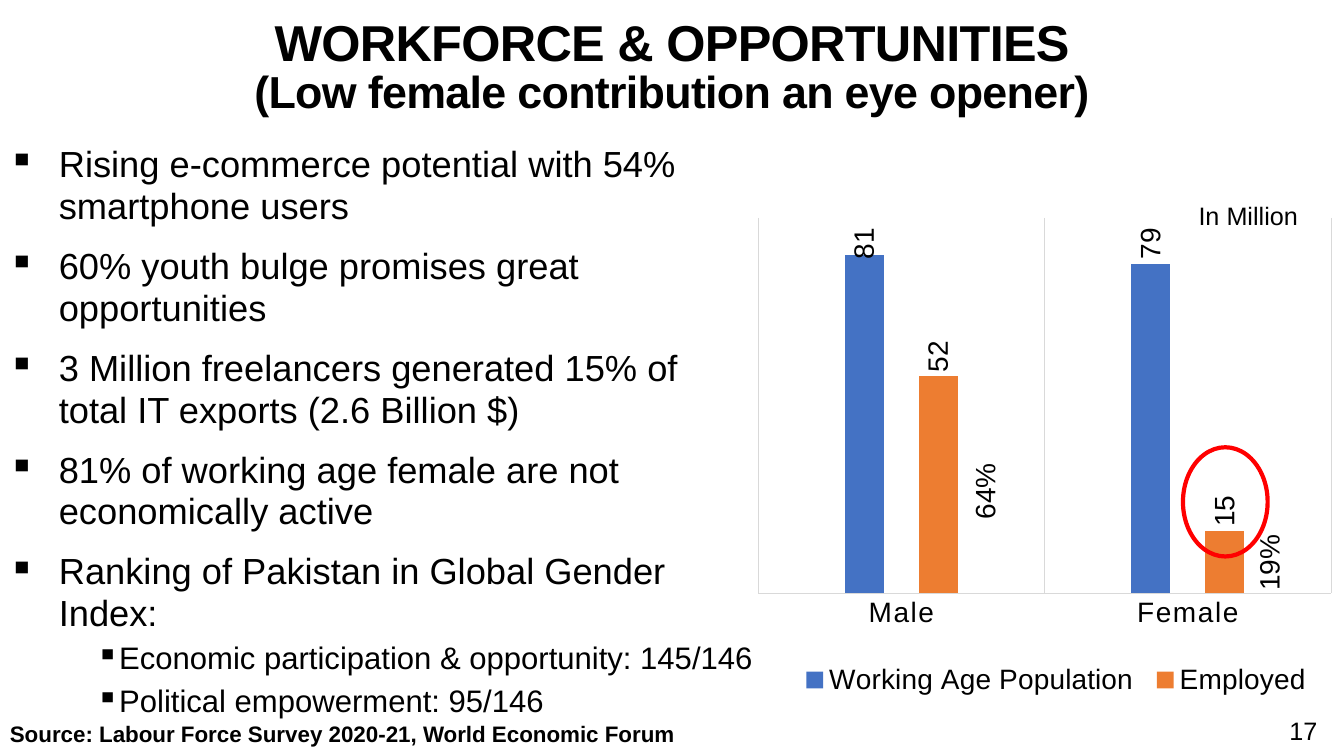
from dataclasses import dataclass

import pptx
import pptx.chart.data
import pptx.dml.color
import pptx.enum.chart
import pptx.enum.text
import pptx.enum.shapes
import pptx.oxml
import pptx.oxml.ns
import pptx.util

Pt = pptx.util.Pt
RGB = pptx.dml.color.RGBColor.from_string
qn = pptx.oxml.ns.qn
PP_ALIGN = pptx.enum.text.PP_ALIGN
ANCHOR = pptx.enum.text.MSO_ANCHOR


@dataclass(frozen=True)
class Theme:
    """Colours, font and type sizes of the slide."""
    font: str = "Arial"
    text: str = "000000"
    grid: str = "D9D9D9"
    mark: str = "FF0000"
    series: tuple = ("4472C4", "ED7D31")
    title: float = 36
    subtitle: float = 32
    body: float = 25.9
    sub: float = 22.2
    chart: float = 20
    small: float = 18
    source: float = 16


THEME = Theme()

BULLETS = [
    (0, "Rising e-commerce potential with 54% smartphone users"),
    (0, "60% youth bulge promises great opportunities"),
    (0, "3 Million freelancers generated 15% of total IT exports (2.6 Billion $)"),
    (0, "81% of working age female are not economically active"),
    (0, "Ranking of Pakistan in Global Gender Index:"),
    (1, "Economic participation & opportunity: 145/146"),
    (1, "Political empowerment: 95/146"),
]


def points(*values):
    """Convert a series of numbers to point lengths."""
    return [Pt(v) for v in values]


def style_font(font, size, bold=False):
    """Apply the theme typeface and colour at a given size."""
    font.name, font.size, font.bold = THEME.font, Pt(size), bold
    font.color.rgb = RGB(THEME.text)


def add_label(slide, box, text, size, bold=False, align=PP_ALIGN.LEFT,
              anchor=ANCHOR.TOP, rotation=0):
    """Add a single-line text box."""
    sp = slide.shapes.add_textbox(*points(*box))
    sp.rotation = rotation
    tf = sp.text_frame
    tf.word_wrap, tf.vertical_anchor = True, anchor
    p = tf.paragraphs[0]
    p.text, p.alignment = text, align
    style_font(p.font, size, bold)


def add_title(slide, box):
    """Format the title placeholder with its two lines."""
    sp = slide.shapes.title
    sp.left, sp.top, sp.width, sp.height = points(*box)
    tf = sp.text_frame
    tf.auto_size = pptx.enum.text.MSO_AUTO_SIZE.NONE
    tf.vertical_anchor = ANCHOR.MIDDLE
    p = tf.paragraphs[0]
    p.alignment, p.line_spacing = PP_ALIGN.CENTER, 0.85
    lines = [("WORKFORCE & OPPORTUNITIES", THEME.title),
             ("(Low female contribution an eye opener)", THEME.subtitle)]
    for i, (text, size) in enumerate(lines):
        if i:
            p.add_line_break()
        r = p.add_run()
        r.text = text
        style_font(r.font, size, True)
        r.font._element.set("spc", "-50")


def add_bullets(slide, box):
    """Add the bulleted list with its two indent levels."""
    tf = slide.shapes.add_textbox(*points(*box)).text_frame
    tf.word_wrap = True
    tf.margin_left = tf.margin_right = 0
    levels = [(THEME.body, 36, 36, 11, 2), (THEME.sub, 72, 9.4, 2, 3.5)]
    for i, (level, text) in enumerate(BULLETS):
        size, left, hang, before, after = levels[level]
        p = tf.add_paragraph() if i else tf.paragraphs[0]
        p.text, p.level, p.line_spacing = text, level, 0.96
        p.space_before, p.space_after = Pt(before), Pt(after)
        style_font(p.font, size)
        pPr = p._p.get_or_add_pPr()
        pPr.set("marL", str(Pt(left)))
        pPr.set("indent", str(-Pt(hang)))
        bullet = pptx.oxml.parse_xml(
            f'<a:buChar {pptx.oxml.ns.nsdecls("a")} char="▪"/>')
        pPr.find(qn("a:defRPr")).addprevious(bullet)


def make_layout(x, y, w=None, h=None, inner=False):
    """Build a manual chart layout from fractions of the chart area."""
    parts = '<c:layoutTarget val="inner"/>' if inner else ""
    if w:
        parts += '<c:xMode val="edge"/><c:yMode val="edge"/>'
    for tag, value in zip("xywh", (x, y, w, h)):
        if value is not None:
            parts += f'<c:{tag} val="{value}"/>'
    return pptx.oxml.parse_xml(
        f'<c:layout {pptx.oxml.ns.nsdecls("c")}>'
        f"<c:manualLayout>{parts}</c:manualLayout></c:layout>")


def add_workforce_chart(slide, box):
    """Add the clustered columns of working age and employed people."""
    enum = pptx.enum.chart
    data = pptx.chart.data.CategoryChartData(number_format="0")
    data.categories = ["Male", "Female"]
    data.add_series("Working Age Population", (81, 79))
    data.add_series("Employed", (52, 15))
    chart = slide.shapes.add_chart(
        enum.XL_CHART_TYPE.COLUMN_CLUSTERED, *points(*box), data).chart
    chart.has_title = False
    style_font(chart.font, THEME.chart)

    plot = chart.plots[0]
    plot.gap_width, plot.overlap, plot.vary_by_categories = 444, -90, False
    for series, color in zip(plot.series, THEME.series):
        series.format.fill.solid()
        series.format.fill.fore_color.rgb = RGB(color)
        labels = series.data_labels
        labels.show_value = True
        labels.number_format, labels.number_format_is_linked = "0", False
        labels.position = enum.XL_LABEL_POSITION.OUTSIDE_END
        style_font(labels.font, THEME.chart)
    first = plot.series[0].points[0].data_label
    first.position = enum.XL_LABEL_POSITION.OUTSIDE_END
    style_font(first.font, THEME.chart)
    root = chart._chartSpace
    for body in root.xpath(".//c:dLbls//c:txPr/a:bodyPr"):
        body.set("rot", "-5400000")
        body.set("vert", "horz")
    root.xpath(".//c:dLbl/c:idx")[0].addnext(make_layout(0, 0.015))

    values, cats = chart.value_axis, chart.category_axis
    values.minimum_scale, values.maximum_scale = 0, 90
    values.has_major_gridlines = values.visible = False
    cats.major_tick_mark = enum.XL_TICK_MARK.NONE
    cats.has_major_gridlines = True
    for line in (cats.format.line, cats.major_gridlines.format.line):
        line.color.rgb, line.width = RGB(THEME.grid), Pt(0.75)
    style_font(cats.tick_labels.font, THEME.chart)
    cats.tick_labels.font._element.set("spc", "100")

    chart.has_legend = True
    legend = chart.legend
    legend.position = enum.XL_LEGEND_POSITION.TOP
    legend.include_in_layout = False
    style_font(legend.font, THEME.chart)
    for layout in root.xpath(".//c:plotArea/c:layout | .//c:legend/c:layout"):
        layout.getparent().remove(layout)
    root.xpath(".//c:plotArea")[0].insert(
        0, make_layout(0.012, 0.026, 0.977, 0.686, True))
    root.xpath(".//c:legendPos")[0].addnext(make_layout(0.07, 0.825, 0.9, 0.09))


def add_chart_notes(slide, box):
    """Add the unit, the shares and the ring over the chart area."""
    x, y = box[:2]
    sp = slide.shapes.add_shape(pptx.enum.shapes.MSO_SHAPE.OVAL,
                                *points(x + 308.5, y + 174, 60.5, 78))
    sp.shadow.inherit = False
    sp.fill.background()
    sp.line.color.rgb, sp.line.width = RGB(THEME.mark), Pt(3)
    add_label(slide, (x + 129.5, y + 179, 75, 32), "64%", THEME.chart, rotation=270)
    add_label(slide, (x + 319.5, y + 216.5, 101.5, 32.5), "19%", THEME.chart, rotation=270)
    add_label(slide, (x + 312.5, y - 6, 115, 29), "In Million", THEME.small)


def add_footer(slide, box):
    """Add the source line and the slide number."""
    x, y, w, h = box
    add_label(slide, (x, y + 3.5, 609, 27),
              "Source: Labour Force Survey 2020-21, World Economic Forum", THEME.source, True)
    add_label(slide, (x + w - 103, y, 103, h), "17", THEME.small,
              align=PP_ALIGN.RIGHT, anchor=ANCHOR.MIDDLE)


def main():
    """Build and save the slide."""
    prs = pptx.Presentation()
    prs.slide_width, prs.slide_height = points(960, 540)
    s = prs.slides.add_slide(prs.slide_layouts[5])
    chart_box = (536.5, 145.5, 419, 391)
    add_title(s, (84, -8, 792, 114.5))
    add_bullets(s, (6, 99.5, 533, 412.5))
    add_workforce_chart(s, chart_box)
    add_chart_notes(s, chart_box)
    add_footer(s, (0, 507.5, 948, 29))
    prs.save("out.pptx")


if __name__ == "__main__":
    main()
